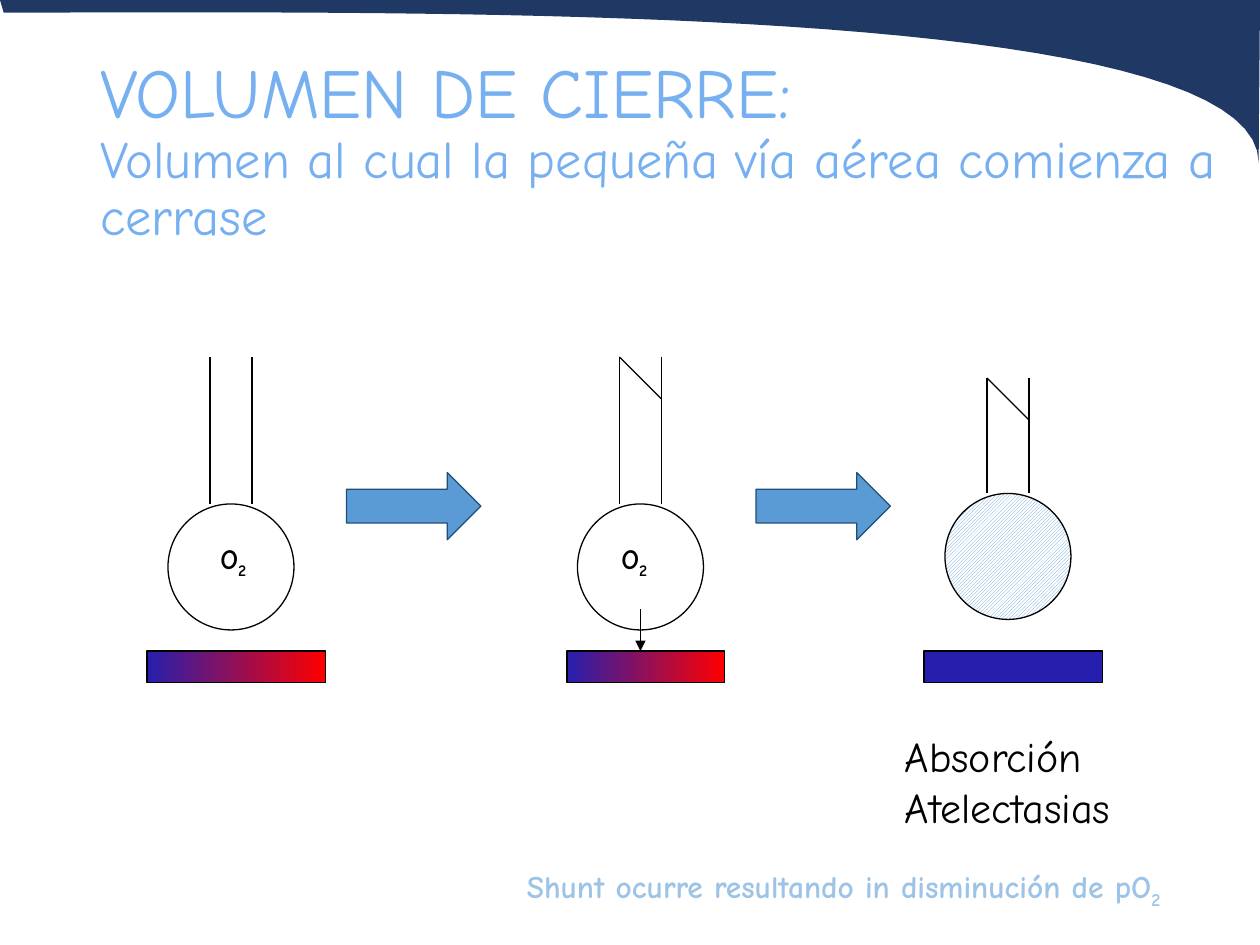
from dataclasses import dataclass
from lxml.etree import SubElement
from pptx import Presentation
from pptx.dml.color import RGBColor
from pptx.enum.dml import MSO_PATTERN
from pptx.enum.shapes import MSO_CONNECTOR, MSO_SHAPE
from pptx.enum.text import MSO_ANCHOR, PP_ALIGN
from pptx.oxml.ns import qn
from pptx.slide import Slide
from pptx.util import Inches, Pt

BLACK = RGBColor(0x00, 0x00, 0x00)
WHITE = RGBColor(0xFF, 0xFF, 0xFF)
NAVY = RGBColor(0x20, 0x38, 0x64)
SKY = RGBColor(0x77, 0xB0, 0xF1)
PALE = RGBColor(0x9D, 0xC3, 0xE6)
STEEL = RGBColor(0x5B, 0x9B, 0xD5)
STEEL_EDGE = RGBColor(0x1F, 0x4E, 0x79)
VENOUS = RGBColor(0x26, 0x1F, 0xAD)
ARTERIAL = RGBColor(0xFE, 0x00, 0x00)

UNIT = Inches(1) / 12
BANNER_CURVES = [
    [(10, 0), (10, 0.14), (9.99, 1.15), (9.99, 1.29)],
    [(9.99, 1.29), (9.98, 0), (3.36, 0.1), (0.03, 0.1)],
]


def grid(*cells):
    return [round(cell * UNIT) for cell in cells]


def bezier(points, steps=40):
    for step in range(1, steps + 1):
        t = step / steps
        weights = ((1 - t) ** 3, 3 * t * (1 - t) ** 2, 3 * t * t * (1 - t), t ** 3)
        yield tuple(round(Inches(1) * sum(w * p[axis] for w, p in zip(weights, points)))
                    for axis in (0, 1))


def write(paragraph, text, size=16, color=BLACK, bold=False, sub="", font="Comic Neue"):
    for part, baseline in ((text, None), (sub, "-25000")):
        if not part:
            continue
        run = paragraph.add_run()
        run.text = part
        run.font.name = font
        run.font.size = Pt(size)
        run.font.bold = bold
        run.font.color.rgb = color
        if baseline:
            run.font._element.set("baseline", baseline)


@dataclass
class Diagram:
    slide: Slide
    stroke: float = 0.75

    def banner(self):
        outline = self.slide.shapes.build_freeform(0, 0)
        outline.add_line_segments([(Inches(10), 0)], close=False)
        for curve in BANNER_CURVES:
            outline.add_line_segments(bezier(curve), close=False)
        outline.add_line_segments([(0, 0)], close=True)
        swoosh = outline.convert_to_shape()
        swoosh.shadow.inherit = False
        swoosh.fill.solid()
        swoosh.fill.fore_color.rgb = NAVY
        swoosh.line.fill.background()

    def title(self, heading, definition):
        holder = self.slide.shapes.title
        holder.left, holder.top, holder.width, holder.height = grid(2, 4, 116, 21)
        holder.text_frame.vertical_anchor = MSO_ANCHOR.MIDDLE
        paragraph = holder.text_frame.paragraphs[0]
        paragraph.alignment = PP_ALIGN.LEFT
        paragraph.line_spacing = 0.9
        margins = paragraph._p.get_or_add_pPr()
        margins.set("marL", str(Inches(0.53)))
        margins.set("indent", "0")
        write(paragraph, heading, size=40, color=SKY)
        paragraph.add_line_break()
        write(paragraph, definition, size=30, color=SKY)

    def label(self, left, top, width, height, *lines, fill=None, **style):
        box = self.slide.shapes.add_textbox(*grid(left, top, width, height))
        if fill is not None:
            box.fill.solid()
            box.fill.fore_color.rgb = fill
        frame = box.text_frame
        frame.word_wrap = True
        for index, line in enumerate(lines):
            paragraph = frame.add_paragraph() if index else frame.paragraphs[0]
            write(paragraph, line, **style)

    def shape(self, kind, left, top, width, height, fill=None, edge=BLACK):
        item = self.slide.shapes.add_shape(kind, *grid(left, top, width, height))
        item.shadow.inherit = False
        item.line.color.rgb = edge
        item.line.width = Pt(self.stroke)
        if fill is None:
            item.fill.background()
        else:
            item.fill.solid()
            item.fill.fore_color.rgb = fill
        return item

    def line(self, x1, y1, x2, y2, arrow=False):
        link = self.slide.shapes.add_connector(MSO_CONNECTOR.STRAIGHT, *grid(x1, y1, x2, y2))
        link.line.color.rgb = BLACK
        link.line.width = Pt(self.stroke)
        if arrow:
            SubElement(link.line._get_or_add_ln(), qn("a:tailEnd"), type="triangle")
        SubElement(link._element.spPr, qn("a:effectLst"))

    def alveolus(self, left, top, airway_top, closed=False, collapsed=False):
        sac = self.shape(MSO_SHAPE.OVAL, left, top, 12, 12)
        if collapsed:
            sac.fill.patterned()
            sac.fill.pattern = MSO_PATTERN.DARK_UPWARD_DIAGONAL
            sac.fill.fore_color.rgb = STEEL
            sac.fill.back_color.rgb = WHITE
        for wall in (left + 4, left + 8):
            self.line(wall, airway_top, wall, top)
        if closed:
            self.line(left + 4, airway_top, left + 8, airway_top + 4)

    def capillary(self, left, width, oxygenated=True):
        vessel = self.shape(MSO_SHAPE.RECTANGLE, left, 62, width, 3, fill=VENOUS)
        if oxygenated:
            vessel.fill.gradient()
            vessel.fill.gradient_angle = 0
            for stop, color in zip(vessel.fill.gradient_stops, (VENOUS, ARTERIAL)):
                stop.color.rgb = color

    def next_stage(self, left):
        self.shape(MSO_SHAPE.RIGHT_ARROW, left, 45, 12.8, 6.4, fill=STEEL, edge=STEEL_EDGE)


def main():
    deck = Presentation()
    deck.slide_width, deck.slide_height = grid(120, 90)
    diagram = Diagram(deck.slides.add_slide(deck.slide_layouts[5]))

    diagram.banner()
    diagram.title("VOLUMEN DE CIERRE:",
                  "Volumen al cual la pequeña vía aérea comienza a cerrase")

    diagram.alveolus(16, 48, airway_top=34)
    diagram.alveolus(55, 48, airway_top=34, closed=True)
    diagram.alveolus(90, 47, airway_top=36, closed=True, collapsed=True)
    for left in (33, 72):
        diagram.next_stage(left)

    diagram.capillary(14, 17)
    diagram.capillary(54, 15)
    diagram.capillary(88, 17, oxygenated=False)
    diagram.line(61, 58, 61, 62, arrow=True)

    for left in (19.8, 58):
        diagram.label(left, 51, 6, 4.4, "O", sub="2", bold=True)
    diagram.label(85, 69, 26, 11, "Absorción", "Atelectasias", size=24)
    diagram.label(49, 82, 71, 4.8, "Shunt ocurre resultando in disminución de pO",
                  sub="2", size=18, color=PALE, bold=True, fill=WHITE)

    deck.save("out.pptx")


if __name__ == "__main__":
    main()
